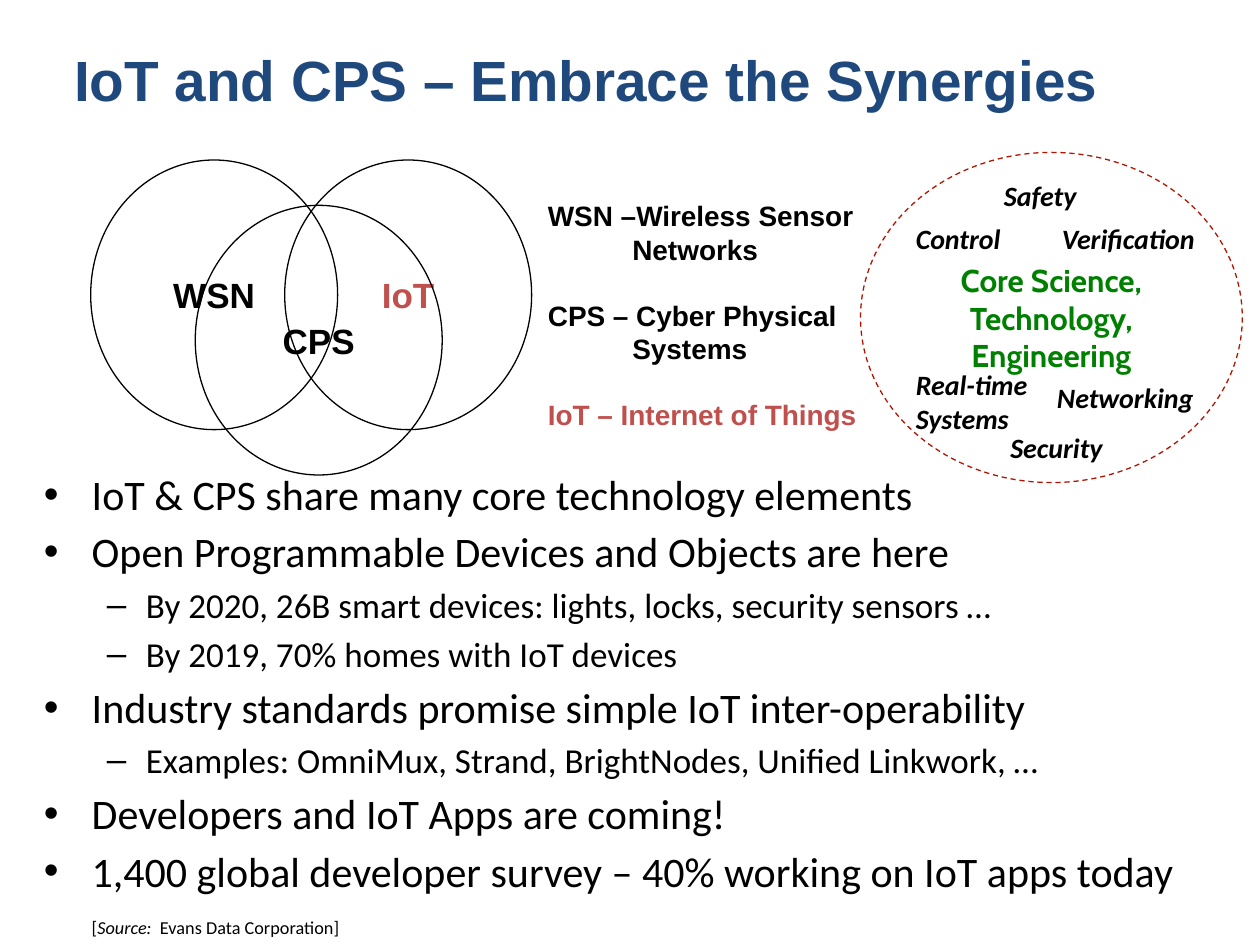
from lxml.etree import SubElement
from pptx import Presentation
from pptx.dml.color import RGBColor
from pptx.enum.dml import MSO_LINE
from pptx.enum.shapes import MSO_SHAPE
from pptx.enum.text import MSO_ANCHOR, PP_ALIGN
from pptx.oxml.ns import qn
from pptx.util import Inches, Pt

BLACK = RGBColor(0x00, 0x00, 0x00)
NAVY = RGBColor(0x1F, 0x49, 0x7D)
RED = RGBColor(0xC0, 0x50, 0x4D)
DARK_RED = RGBColor(0xB1, 0x14, 0x00)
GREEN = RGBColor(0x00, 0x80, 0x00)

TITLE = "IoT and CPS – Embrace the Synergies"
CIRCLE_SIZE = (1.96, 2.14)
CIRCLES = [("WSN", 0.72, 1.27, BLACK), ("IoT", 2.26, 1.27, RED), ("CPS", 1.55, 1.63, BLACK)]
# first line, indented second line, colour
DEFINITIONS = [
    ("WSN –Wireless Sensor", "Networks", BLACK),
    ("CPS – Cyber Physical", "Systems", BLACK),
    ("IoT – Internet of Things", None, RED),
]
CORE = "Core Science,\vTechnology,\vEngineering"
TOPICS = [
    ("Safety", 7.87, 1.37, 0.93),
    ("Control", 7.17, 1.71, 1.05),
    ("Verification", 8.33, 1.71, 1.47),
    ("Real-time\nSystems", 7.17, 2.87, 1.27),
    ("Networking", 8.29, 2.97, 1.48),
    ("Security", 7.92, 3.37, 1.14),
]
# level, text
BULLETS = [
    (0, "IoT & CPS share many core technology elements"),
    (0, "Open Programmable Devices and Objects are here"),
    (1, "By 2020, 26B smart devices: lights, locks, security sensors …"),
    (1, "By 2019, 70% homes with IoT devices"),
    (0, "Industry standards promise simple IoT inter-operability"),
    (1, "Examples: OmniMux, Strand, BrightNodes, Unified Linkwork, …"),
    (0, "Developers and IoT Apps are coming!"),
    (0, "1,400 global developer survey – 40% working on IoT apps today "),
]
SOURCE = [("[", False), ("Source: ", True), (" Evans Data Corporation]", False)]
# bullet, left margin, hanging indent, text size
LEVELS = [("•", 0.38, 0.38, 24), ("–", 0.81, 0.31, 20)]


def set_font(para, name, size, color, bold=False, italic=False):
    font = para.font
    font.name, font.size, font.bold, font.italic = name, Pt(size), bold, italic
    font.color.rgb = color


def add_text_box(page, left, top, width, height, wrap=True):
    box = page.shapes.add_textbox(Inches(left), Inches(top), Inches(width), Inches(height))
    box.text_frame.word_wrap = wrap
    return box.text_frame


def next_para(frame, first):
    return frame.paragraphs[0] if first else frame.add_paragraph()


def add_ellipse(page, left, top, width, height, text, line_color, font):
    ellipse = page.shapes.add_shape(
        MSO_SHAPE.OVAL, Inches(left), Inches(top), Inches(width), Inches(height))
    ellipse.shadow.inherit = False
    ellipse.fill.background()
    ellipse.line.color.rgb = line_color
    ellipse.line.width = Pt(0.75)
    frame = ellipse.text_frame
    frame.word_wrap = False
    frame.vertical_anchor = MSO_ANCHOR.MIDDLE
    para = frame.paragraphs[0]
    para.text = text
    para.alignment = PP_ALIGN.CENTER
    set_font(para, *font, bold=True)
    return ellipse


def add_bullet(para, level):
    char, margin, hanging, size = LEVELS[level]
    para.level = level
    props = para._p.get_or_add_pPr()
    props.set("marL", str(Inches(margin)))
    props.set("indent", str(-Inches(hanging)))
    SubElement(props, qn("a:buFont"), typeface="Arial")
    SubElement(props, qn("a:buChar"), char=char)
    set_font(para, "Calibri", size, BLACK)


def add_definitions(page):
    frame = add_text_box(page, 4.25, 1.53, 2.75, 1.99)
    for index, (term, rest, color) in enumerate(DEFINITIONS):
        para = next_para(frame, index == 0)
        para.text = term
        if index:
            para.space_before = Pt(18.4)
        set_font(para, "Arial", 16, color, bold=True)
        if rest:
            para = frame.add_paragraph()
            para.text = rest
            para._p.get_or_add_pPr().set("marL", str(Inches(0.67)))
            set_font(para, "Arial", 16, color, bold=True)


def add_bullets(page):
    frame = add_text_box(page, 0.25, 3.67, 9.24, 3.5)
    for index, (level, text) in enumerate(BULLETS):
        para = next_para(frame, index == 0)
        para.text = text
        if index:
            para.space_before = Pt(4)
        add_bullet(para, level)
    for text, italic in SOURCE:
        span = para.add_run()
        span.text = text
        span.font.size = Pt(18)
        span.font.italic = italic
        span.font._element.set("baseline", "-25000")


def main():
    deck = Presentation()
    deck.slide_width, deck.slide_height = Inches(10), Inches(7.5)
    page = deck.slides.add_slide(deck.slide_layouts[6])

    frame = add_text_box(page, 0.49, 0, 9, 1.25)
    frame.vertical_anchor = MSO_ANCHOR.MIDDLE
    frame.text = TITLE
    set_font(frame.paragraphs[0], "Arial", 32.4, NAVY, bold=True)

    for text, left, top, color in CIRCLES:
        add_ellipse(page, left, top, *CIRCLE_SIZE, text, BLACK, ("Arial", 20, color))
    add_definitions(page)
    add_bullets(page)

    core = add_ellipse(page, 6.83, 1.21, 3.03, 2.62, CORE, DARK_RED, ("Cabin", 18, GREEN))
    core.line.dash_style = MSO_LINE.DASH
    for text, left, top, width in TOPICS:
        lines = text.split("\n")
        frame = add_text_box(page, left, top, width, 0.1 + 0.27 * len(lines), wrap=False)
        frame.text = text
        for para in frame.paragraphs:
            set_font(para, "Calibri", 16, BLACK, bold=True, italic=True)

    deck.save("out.pptx")


if __name__ == "__main__":
    main()
